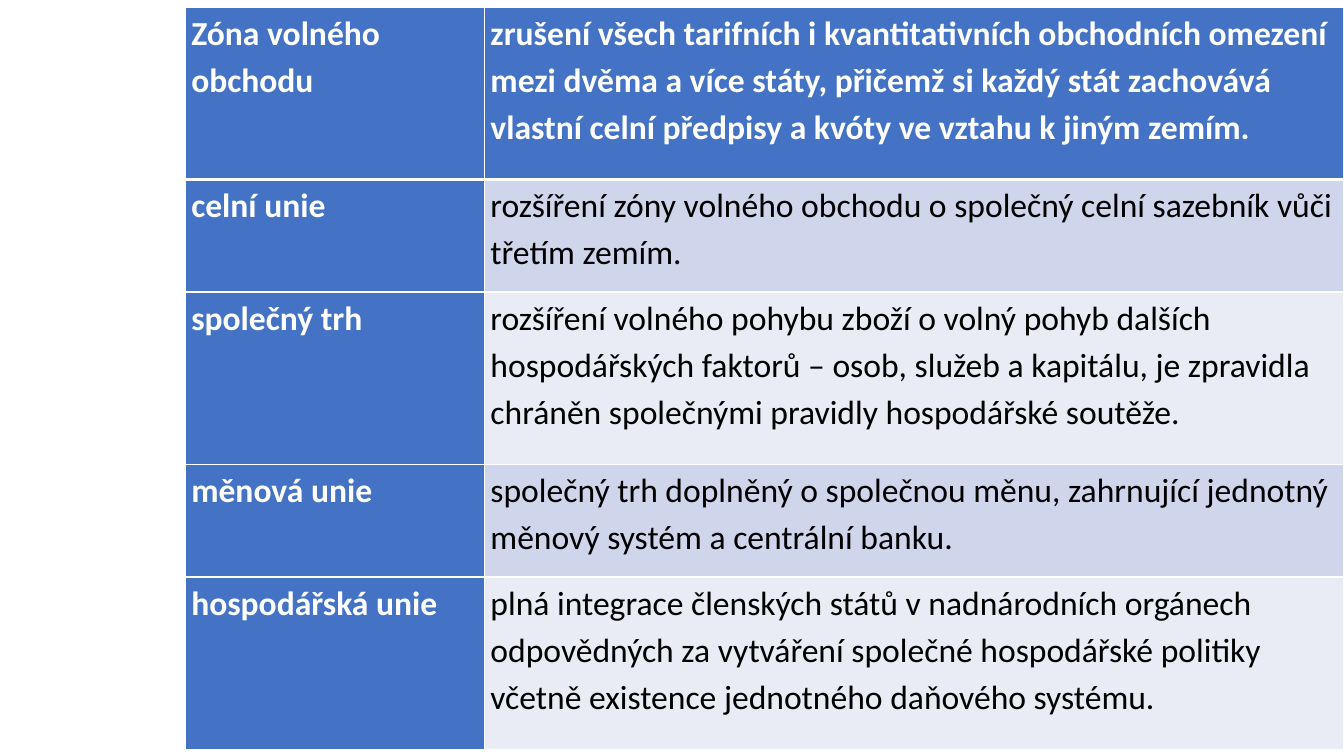
from dataclasses import dataclass

from lxml import etree
from pptx import Presentation
from pptx.dml.color import RGBColor
from pptx.oxml import ns
from pptx.util import Cm, Pt


@dataclass(frozen=True)
class Theme:
    font: str = "Calibri"
    size: int = 24
    spacing: float = 1.15
    accent: str = "4472C4"
    bands: tuple = ("CFD5EA", "E9EBF5")
    light: str = "FFFFFF"
    dark: str = "000000"
    rule: int = 1
    header_rule: int = 3


THEME = Theme()

# Stage of integration, its description, row height in cm
STAGES = [
    ("Zóna volného obchodu",
     "zrušení všech tarifních i kvantitativních obchodních omezení mezi dvěma a více státy, "
     "přičemž si každý stát zachovává vlastní celní předpisy a kvóty ve vztahu k jiným zemím.",
     4.34),
    ("celní unie",
     "rozšíření zóny volného obchodu o společný celní sazebník vůči třetím zemím.",
     2.84),
    ("společný trh",
     "rozšíření volného pohybu zboží o volný pohyb dalších hospodářských faktorů – osob, "
     "služeb a kapitálu, je zpravidla chráněn společnými pravidly hospodářské soutěže.",
     4.34),
    ("měnová unie",
     "společný trh doplněný o společnou měnu, zahrnující jednotný měnový systém "
     "a centrální banku.",
     2.84),
    ("hospodářská unie",
     "plná integrace členských států v nadnárodních orgánech odpovědných za vytváření "
     "společné hospodářské politiky včetně existence jednotného daňového systému.",
     4.34),
]


def set_borders(cell, widths):
    """Draw the cell's edges; widths are points for left, right, top, bottom."""
    tc_pr = cell._tc.get_or_add_tcPr()
    for side, width in zip("LRTB", widths):
        ln = etree.SubElement(tc_pr, ns.qn(f"a:ln{side}"), w=str(Pt(width)))
        fill = etree.SubElement(ln, ns.qn("a:solidFill"))
        etree.SubElement(fill, ns.qn("a:srgbClr"), val=THEME.light)


def format_cell(cell, words, fill, strong, widths):
    set_borders(cell, widths)
    cell.fill.solid()
    cell.fill.fore_color.rgb = RGBColor.from_string(fill)
    cell.margin_left = cell.margin_right = Cm(0.16)
    cell.margin_top = cell.margin_bottom = 0
    cell.text = words
    p = cell.text_frame.paragraphs[0]
    p.line_spacing = THEME.spacing
    p.font.name = THEME.font
    p.font.size = Pt(THEME.size)
    p.font.bold = strong
    p.font.color.rgb = RGBColor.from_string(THEME.light if strong else THEME.dark)


def add_stage_table(s, left, top, width, label_width):
    """Integration stages: strong header row and first column, banded descriptions."""
    height = sum(stage[2] for stage in STAGES)
    table = s.shapes.add_table(len(STAGES), 2, Cm(left), Cm(top), Cm(width), Cm(height)).table
    table.first_col = True
    table.columns[0].width = Cm(label_width)
    table.columns[1].width = Cm(width - label_width)
    for i, (label, description, row_height) in enumerate(STAGES):
        table.rows[i].height = Cm(row_height)
        above = THEME.header_rule if i == 1 else THEME.rule
        below = THEME.header_rule if i == 0 else THEME.rule
        widths = (THEME.rule, THEME.rule, above, below)
        band = THEME.accent if i == 0 else THEME.bands[(i - 1) % 2]
        format_cell(table.cell(i, 0), label, THEME.accent, True, widths)
        format_cell(table.cell(i, 1), description, band, i == 0, widths)


def main():
    prs = Presentation()
    prs.slide_width, prs.slide_height = Cm(33.87), Cm(19.05)
    s = prs.slides.add_slide(prs.slide_layouts[6])
    add_stage_table(s, left=4.66, top=0.18, width=29.21, label_width=7.54)
    prs.save("out.pptx")


if __name__ == "__main__":
    main()
